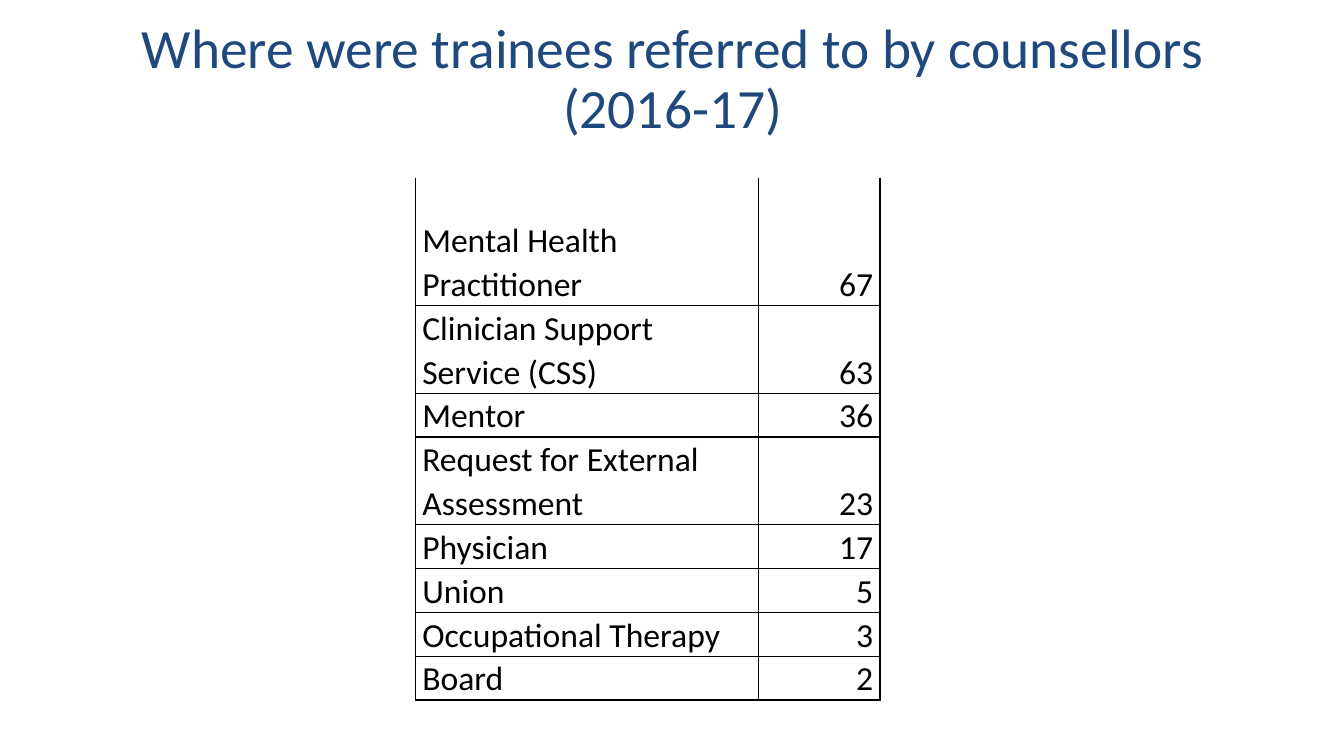
from dataclasses import dataclass
from lxml.etree import SubElement
from pptx import Presentation
from pptx.dml.color import RGBColor
from pptx.enum.text import MSO_ANCHOR, PP_ALIGN
from pptx.oxml.ns import qn
from pptx.util import Inches, Pt


@dataclass(frozen=True)
class Theme:
    font: str = "Calibri"
    head: str = "1F497D"
    ink: str = "000000"
    paper: str = "FFFFFF"
    head_size: float = 39.6
    body_size: float = 24
    rule: float = 1


THEME = Theme()
WIDTH, HEIGHT = Inches(13.33), Inches(7.5)
UNIT = Pt(31.3)  # height of a one-line row
TITLE = "Where were trainees referred to by counsellors (2016-17)"
# label, count, row height in units
REFERRALS = [
    ("Mental Health Practitioner", 67, 2.92),
    ("Clinician Support Service (CSS)", 63, 2),
    ("Mentor", 36, 1),
    ("Request for External Assessment", 23, 2),
    ("Physician", 17, 1),
    ("Union", 5, 1),
    ("Occupational Therapy", 3, 1),
    ("Board", 2, 1),
]


def apply(target, values):
    for name, value in values.items():
        setattr(target, name, value)


def write(frame, text, size, color, align, spacing):
    para = frame.paragraphs[0]
    apply(para, {"alignment": align, "line_spacing": spacing})
    run = para.add_run()
    run.text = text
    apply(run.font, {"name": THEME.font, "size": Pt(size)})
    run.font.color.rgb = RGBColor.from_string(color)


def add_title(slide):
    box = slide.shapes.add_textbox(
        round(WIDTH * 0.069), Inches(0.4), round(WIDTH * 0.863), Inches(1.45))
    apply(box.text_frame, {
        "word_wrap": True,
        "vertical_anchor": MSO_ANCHOR.MIDDLE,
        "margin_bottom": Inches(0.71),
    })
    write(box.text_frame, TITLE, THEME.head_size, THEME.head,
          PP_ALIGN.CENTER, 0.9)


def add_rules(cell, top):
    """Rule every side of a cell; the top side only when asked."""
    props = cell._tc.get_or_add_tcPr()
    for side in "LRTB":
        line = SubElement(props, qn(f"a:ln{side}"), w=str(Pt(THEME.rule)))
        if side == "T" and not top:
            SubElement(line, qn("a:noFill"))
        else:
            fill = SubElement(line, qn("a:solidFill"))
            SubElement(fill, qn("a:srgbClr"), val=THEME.ink)


def fill_cell(cell, text, align, top):
    add_rules(cell, top)
    cell.fill.solid()
    cell.fill.fore_color.rgb = RGBColor.from_string(THEME.paper)
    apply(cell, {
        "vertical_anchor": MSO_ANCHOR.BOTTOM,
        "margin_left": Inches(0.07),
        "margin_right": Inches(0.07),
        "margin_top": 0,
        "margin_bottom": 0,
    })
    write(cell.text_frame, text, THEME.body_size, THEME.ink, align, 1.07)


def add_counts(slide):
    widths = Inches(3.4), Inches(1.21)
    height = round(UNIT * sum(units for *_, units in REFERRALS))
    table = slide.shapes.add_table(
        len(REFERRALS), 2, round(WIDTH * 0.309), round(HEIGHT * 0.235),
        sum(widths), height).table
    apply(table, {"first_row": False, "horz_banding": False})
    for column, width in zip(table.columns, widths):
        column.width = width
    for index, (label, count, units) in enumerate(REFERRALS):
        table.rows[index].height = round(UNIT * units)
        top = index > 0
        fill_cell(table.cell(index, 0), label, PP_ALIGN.LEFT, top)
        fill_cell(table.cell(index, 1), str(count), PP_ALIGN.RIGHT, top)


def main():
    deck = Presentation()
    apply(deck, {"slide_width": WIDTH, "slide_height": HEIGHT})
    slide = deck.slides.add_slide(deck.slide_layouts[6])
    add_title(slide)
    add_counts(slide)
    deck.save("out.pptx")


if __name__ == "__main__":
    main()
